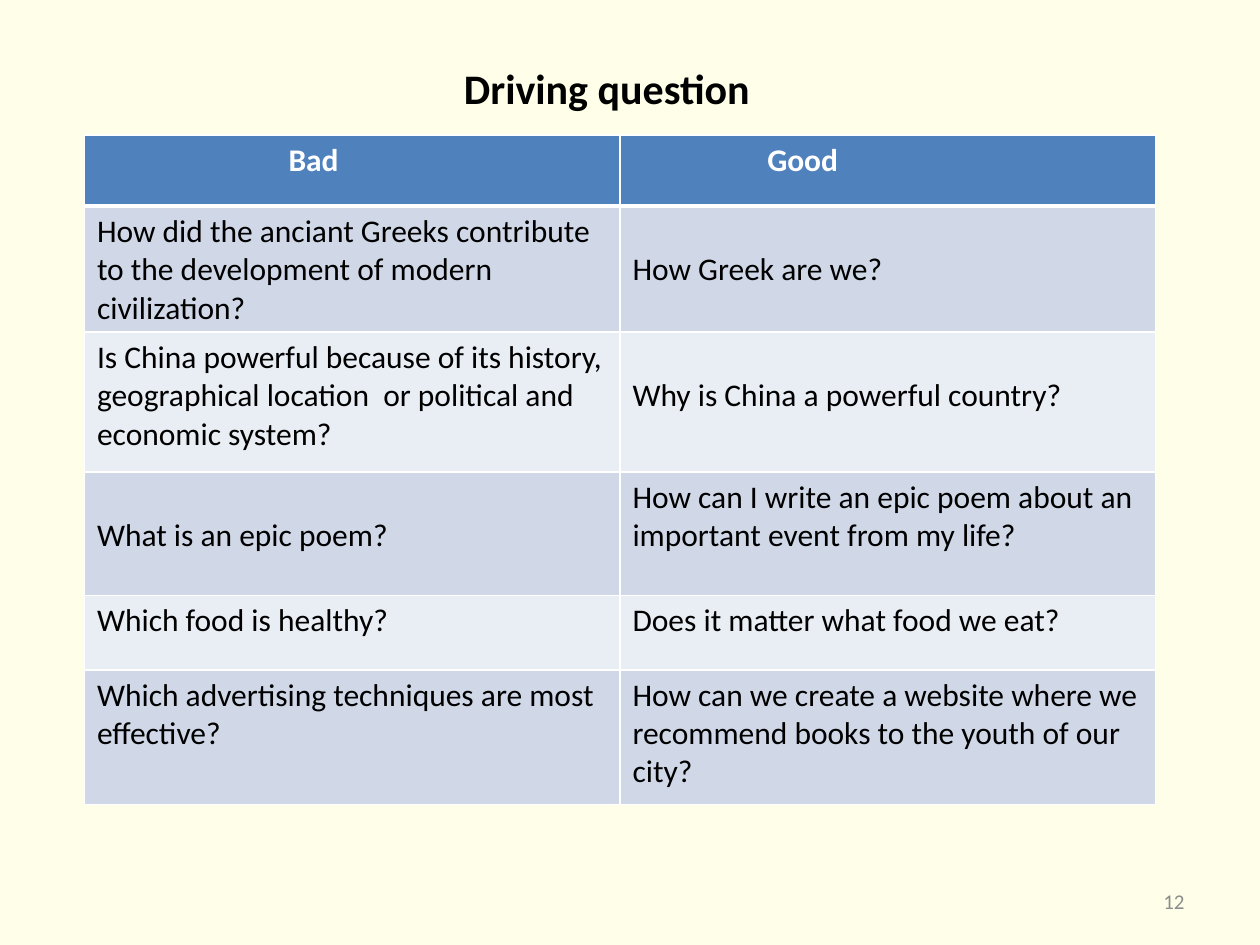
from dataclasses import dataclass

from lxml.etree import SubElement
from pptx import Presentation
from pptx.dml.color import RGBColor
from pptx.enum.text import MSO_ANCHOR as Anchor, PP_ALIGN as Align
from pptx.oxml.ns import qn
from pptx.util import Pt

COLORS = {
    "background": "FFFFE9",
    "header": "4F81BD",
    "odd_row": "D0D8E8",
    "even_row": "E9EDF4",
    "white": "FFFFFF",
    "black": "000000",
    "grey": "8C8C8C",
}
FONT = "Calibri"
LINE_HEIGHT = 22
INSET_X = 7.2
INSET_Y = 3.6
COLUMN_WIDTH = 306


@dataclass
class Entry:
    text: str
    indent: float = 0
    lines_above: int = 0


@dataclass
class Row:
    height: float
    bad: Entry
    good: Entry


ROWS = [
    Row(40.5, Entry("Bad", indent=109.5), Entry("Good", indent=77)),
    Row(
        67,
        Entry("How did the anciant Greeks contribute to the development of modern civilization?"),
        Entry("How Greek are we?", lines_above=1),
    ),
    Row(
        80,
        Entry(
            "Is China powerful because of its history,\v"
            "geographical location  or political and economic system?"
        ),
        Entry("Why is China a powerful country?", lines_above=1),
    ),
    Row(
        70.5,
        Entry("What is an epic poem?", lines_above=1),
        Entry("How can I write an epic poem about an important event from my life?"),
    ),
    Row(42.5, Entry("Which food is healthy?"), Entry("Does it matter what food we eat?")),
    Row(
        77,
        Entry("Which advertising techniques are most effective?"),
        Entry("How can we create a website where we recommend books to the youth of our city?"),
    ),
]


def color(name: str) -> RGBColor:
    return RGBColor.from_string(COLORS[name])


def write_text(text_frame, text: str, *, size: float = 18, ink: str = "black",
               bold: bool = False, align=Align.LEFT, anchor=Anchor.TOP) -> None:
    text_frame.word_wrap = True
    text_frame.vertical_anchor = anchor
    paragraph = text_frame.paragraphs[0]
    paragraph.text = text
    paragraph.alignment = align
    for run in paragraph.runs:
        run.font.name = FONT
        run.font.size = Pt(size)
        run.font.bold = bold
        run.font.color.rgb = color(ink)


def add_label(slide, text: str, left: float, top: float, width: float, height: float,
              **text_format) -> None:
    shape = slide.shapes.add_textbox(Pt(left), Pt(top), Pt(width), Pt(height))
    write_text(shape.text_frame, text, **text_format)


def set_borders(cell, top: float, bottom: float) -> None:
    properties = cell._tc.get_or_add_tcPr()
    for side, width in {"L": 1, "R": 1, "T": top, "B": bottom}.items():
        line = SubElement(properties, qn(f"a:ln{side}"), w=str(Pt(width)))
        fill = SubElement(line, qn("a:solidFill"))
        SubElement(fill, qn("a:srgbClr"), val=COLORS["white"])


def fill_cell(cell, entry: Entry, row_index: int) -> None:
    is_header = row_index == 0
    set_borders(cell, top=3 if row_index == 1 else 1, bottom=3 if is_header else 1)
    cell.fill.solid()
    band = "header" if is_header else "odd_row" if row_index % 2 else "even_row"
    cell.fill.fore_color.rgb = color(band)
    cell.margin_left = Pt(INSET_X + entry.indent)
    cell.margin_right = Pt(INSET_X)
    cell.margin_top = Pt(INSET_Y + entry.lines_above * LINE_HEIGHT)
    cell.margin_bottom = Pt(INSET_Y)
    write_text(cell.text_frame, entry.text, bold=is_header,
               ink="white" if is_header else "black")


def add_question_table(slide, left: float, top: float) -> None:
    height = sum(row.height for row in ROWS)
    shape = slide.shapes.add_table(
        len(ROWS), 2, Pt(left), Pt(top), Pt(2 * COLUMN_WIDTH), Pt(height)
    )
    table = shape.table
    for row_index, row in enumerate(ROWS):
        table.rows[row_index].height = Pt(row.height)
        for column_index, entry in enumerate((row.bad, row.good)):
            fill_cell(table.cell(row_index, column_index), entry, row_index)


def main() -> None:
    presentation = Presentation()
    presentation.slide_width = Pt(720)
    presentation.slide_height = Pt(540)
    slide = presentation.slides.add_slide(presentation.slide_layouts[6])
    slide.background.fill.solid()
    slide.background.fill.fore_color.rgb = color("background")

    add_label(slide, "12", 516, 500.5, 168, 28.75, size=12, ink="grey",
              align=Align.RIGHT, anchor=Anchor.MIDDLE)
    add_label(slide, "Driving question", 258, 32, 385, 36, size=24, bold=True)
    add_question_table(slide, 48.25, 77.25)
    presentation.save("out.pptx")


if __name__ == "__main__":
    main()
